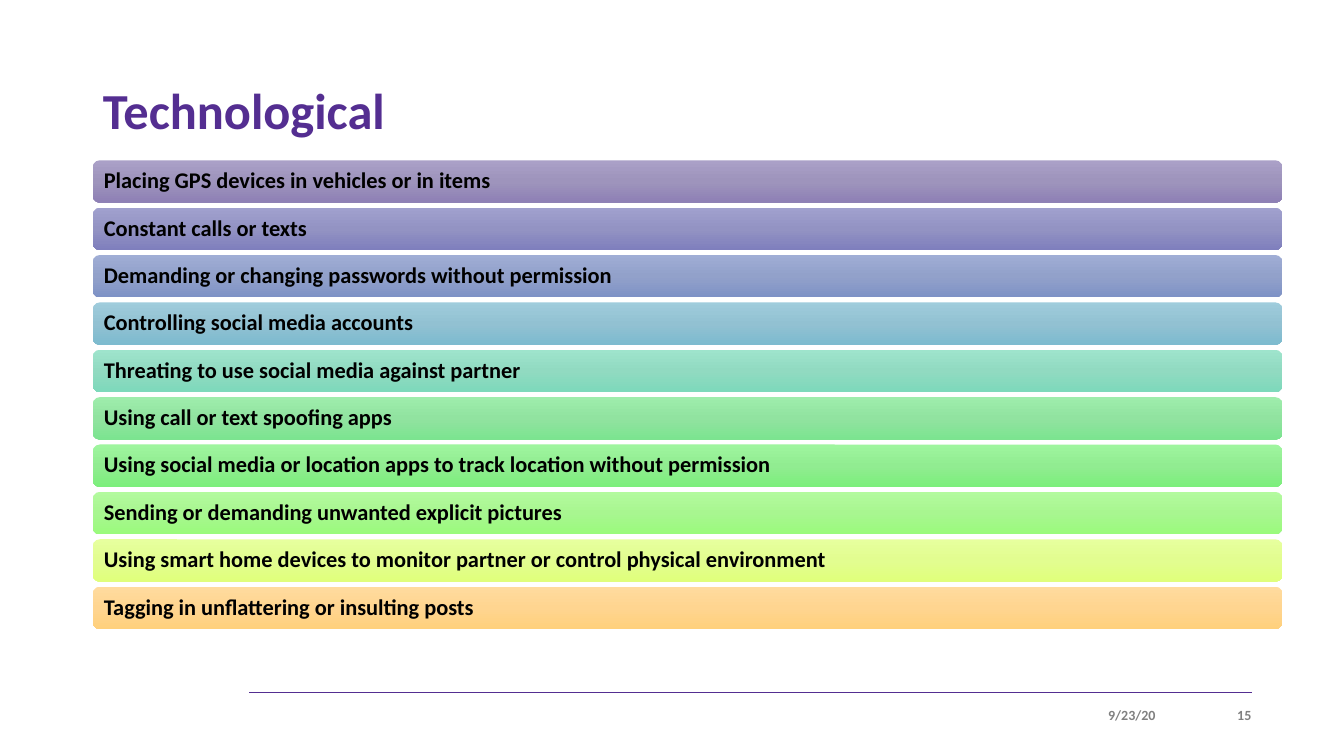
import copy
from dataclasses import dataclass

import pptx
import pptx.dml.color
import pptx.enum.shapes
import pptx.enum.text
import pptx.oxml.ns
import pptx.util
from pptx.util import Inches

# Content
HEADING = "Technological"
TACTICS = [  # wording, then gradient colours from top to bottom
    ("Placing GPS devices in vehicles or in items", ("AAA0C7", "9E94BC", "8E80B5")),
    ("Constant calls or texts", ("A0A0CE", "9393C3", "7F7FBD")),
    ("Demanding or changing passwords without permission", ("9FADD5", "92A1CA", "7E92C6")),
    ("Controlling social media accounts", ("9FCCDC", "92C1D2", "7DBBCF")),
    ("Threating to use social media against partner", ("9EE4CC", "91DAC1", "7DD9BB")),
    ("Using call or text spoofing apps", ("9EEDAC", "91E3A0", "7CE490")),
    ("Using social media or location apps to track location without permission",
     ("9EF59E", "91EC91", "7CEF7C")),
    ("Sending or demanding unwanted explicit pictures", ("B3FA9E", "A8F690", "9AFB7C")),
    ("Using smart home devices to monitor partner or control physical environment",
     ("E7FF9E", "E2FD90", "E0FF7C")),
    ("Tagging in unflattering or insulting posts", ("FFDB9E", "FFD590", "FFD07C")),
]
FOOTER = [("9/23/20", 8.46, 3.0), ("15", 11.62, 0.79)]  # text, left, width


@dataclass(frozen=True)
class Theme:
    font: str = "Calibri"
    accent: str = "542E91"
    ink: str = "000000"
    muted: str = "808080"
    title_size: int = 36
    bar_size: int = 16
    footer_size: int = 10
    rule_width: float = 0.5


THEME = Theme()
LEFT = 0.92
BAR_TOP, BAR_WIDTH, BAR_HEIGHT, BAR_PITCH = 1.59, 11.8, 0.42, 0.47
RULE_START, RULE_END, RULE_Y = 2.47, 12.42, 6.87


def rgb(value):
    return pptx.dml.color.RGBColor.from_string(value)


def write(frame, wording, size, color, align, spacing=1.0, insets=(0.1, 0.05)):
    frame.text = wording
    frame.word_wrap = True
    frame.vertical_anchor = pptx.enum.text.MSO_ANCHOR.MIDDLE
    frame.margin_left = frame.margin_right = Inches(insets[0])
    frame.margin_top = frame.margin_bottom = Inches(insets[1])
    paragraph = frame.paragraphs[0]
    paragraph.alignment = align
    paragraph.line_spacing = spacing
    font = paragraph.runs[0].font
    font.name, font.size, font.bold = THEME.font, pptx.util.Pt(size), True
    font.color.rgb = rgb(color)


def shade(fill, colors):
    """Fill with evenly spaced colours running from top to bottom."""
    fill.gradient()
    fill.gradient_angle = 270
    first = fill._fill._gradFill.gsLst[0]
    first.addnext(copy.deepcopy(first))
    stops = fill.gradient_stops
    for index, color in enumerate(colors):
        stops[index].position = index / (len(colors) - 1)
        stops[index].color.rgb = rgb(color)


def add_bar(slide, row, wording, colors):
    bar = slide.shapes.add_shape(
        pptx.enum.shapes.MSO_SHAPE.ROUNDED_RECTANGLE,
        Inches(LEFT), Inches(BAR_TOP + row * BAR_PITCH),
        Inches(BAR_WIDTH), Inches(BAR_HEIGHT))
    bar.shadow.inherit = False
    bar.line.fill.background()
    shade(bar.fill, colors)
    write(bar.text_frame, wording, THEME.bar_size, THEME.ink,
          pptx.enum.text.PP_ALIGN.LEFT, spacing=0.9, insets=(0.09, 0.07))


def main():
    deck = pptx.Presentation()
    deck.slide_width, deck.slide_height = Inches(13.33), Inches(7.5)
    slide = deck.slides.add_slide(deck.slide_layouts[5])

    # Title
    title = slide.shapes.title
    title.left, title.top = Inches(LEFT), Inches(0.4)
    title.width, title.height = Inches(11.5), Inches(1.45)
    write(title.text_frame, HEADING, THEME.title_size, THEME.accent,
          pptx.enum.text.PP_ALIGN.LEFT, spacing=0.9)

    # Stack of bars
    for row, (wording, colors) in enumerate(TACTICS):
        add_bar(slide, row, wording, colors)

    # Footer rule, date and page number
    rule = slide.shapes.add_connector(
        pptx.enum.shapes.MSO_CONNECTOR.STRAIGHT,
        Inches(RULE_START), Inches(RULE_Y), Inches(RULE_END), Inches(RULE_Y))
    rule.line.color.rgb = rgb(THEME.accent)
    rule.line.width = pptx.util.Pt(THEME.rule_width)
    properties = rule._element.spPr
    properties.append(properties.makeelement(pptx.oxml.ns.qn("a:effectLst"), {}))
    for wording, left, width in FOOTER:
        note = slide.shapes.add_textbox(
            Inches(left), Inches(6.95), Inches(width), Inches(0.28))
        write(note.text_frame, wording, THEME.footer_size, THEME.muted,
              pptx.enum.text.PP_ALIGN.RIGHT, insets=(0, 0.05))

    deck.save("out.pptx")


if __name__ == "__main__":
    main()
